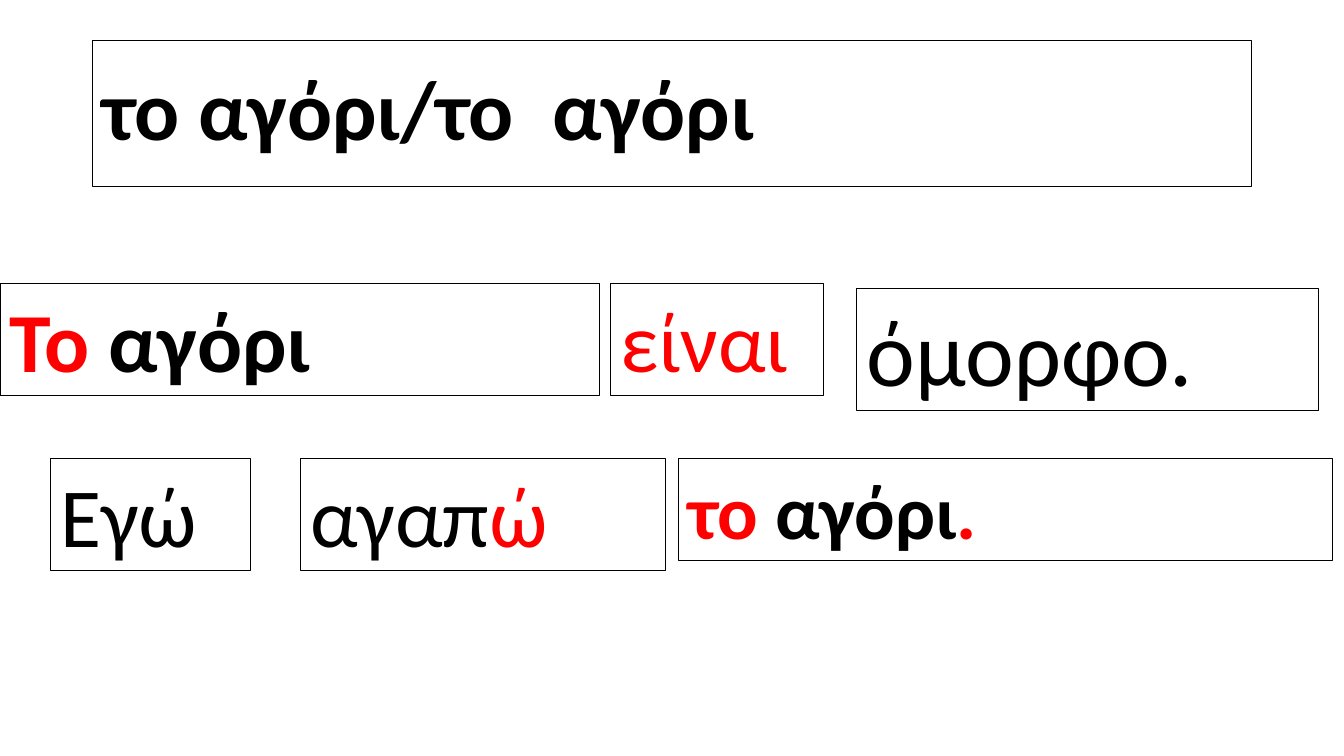
from pptx import Presentation
from pptx.dml.color import RGBColor
from pptx.enum.text import MSO_ANCHOR
from pptx.util import Pt

MIDDLE = MSO_ANCHOR.MIDDLE
TOP = MSO_ANCHOR.TOP
BLACK = RGBColor(0, 0, 0)
RED = RGBColor(255, 0, 0)
FONT = "Calibri"


def add_word_box(slide, box, parts, size=60, bold=False, anchor=TOP, line_spacing=1.0):
    shape = slide.shapes.add_textbox(*(Pt(length) for length in box))
    shape.line.color.rgb = BLACK
    shape.line.width = Pt(0.75)
    text_frame = shape.text_frame
    text_frame.word_wrap = True
    text_frame.vertical_anchor = anchor
    paragraph = text_frame.paragraphs[0]
    paragraph.line_spacing = line_spacing
    for text, color in parts:
        run = paragraph.add_run()
        run.text = text
        run.font.name = FONT
        run.font.size = Pt(size)
        run.font.bold = bold
        run.font.color.rgb = color


def add_title(slide, box):
    add_word_box(slide, box, [("το αγόρι/το  αγόρι", BLACK)],
                 bold=True, anchor=MIDDLE, line_spacing=0.9)


def add_subject_sentence(slide, left, top):
    add_word_box(slide, (left, top, 428.4, 80), [("Το", RED), (" αγόρι", BLACK)], bold=True)
    add_word_box(slide, (left + 436.2, top, 152, 80), [("είναι", RED)])
    add_word_box(slide, (left + 612, top + 4, 330, 87.2), [("όμορφο.", BLACK)], size=66)


def add_object_sentence(slide, left, top):
    add_word_box(slide, (left, top, 142.8, 80), [("Εγώ", BLACK)])
    add_word_box(slide, (left + 178.6, top, 260.6, 80), [("αγαπ", BLACK), ("ώ", RED)])
    add_word_box(slide, (left + 448.5, top, 467.3, 72.7),
                 [("το ", RED), ("αγόρι", BLACK), (".", RED)], size=54, bold=True)


def main():
    presentation = Presentation()
    presentation.slide_width = Pt(960)
    presentation.slide_height = Pt(540)
    slide = presentation.slides.add_slide(presentation.slide_layouts[6])
    add_title(slide, (66, 28.75, 828, 104.4))
    add_subject_sentence(slide, 0, 202.4)
    add_object_sentence(slide, 36, 327.6)
    presentation.save("out.pptx")


if __name__ == "__main__":
    main()
